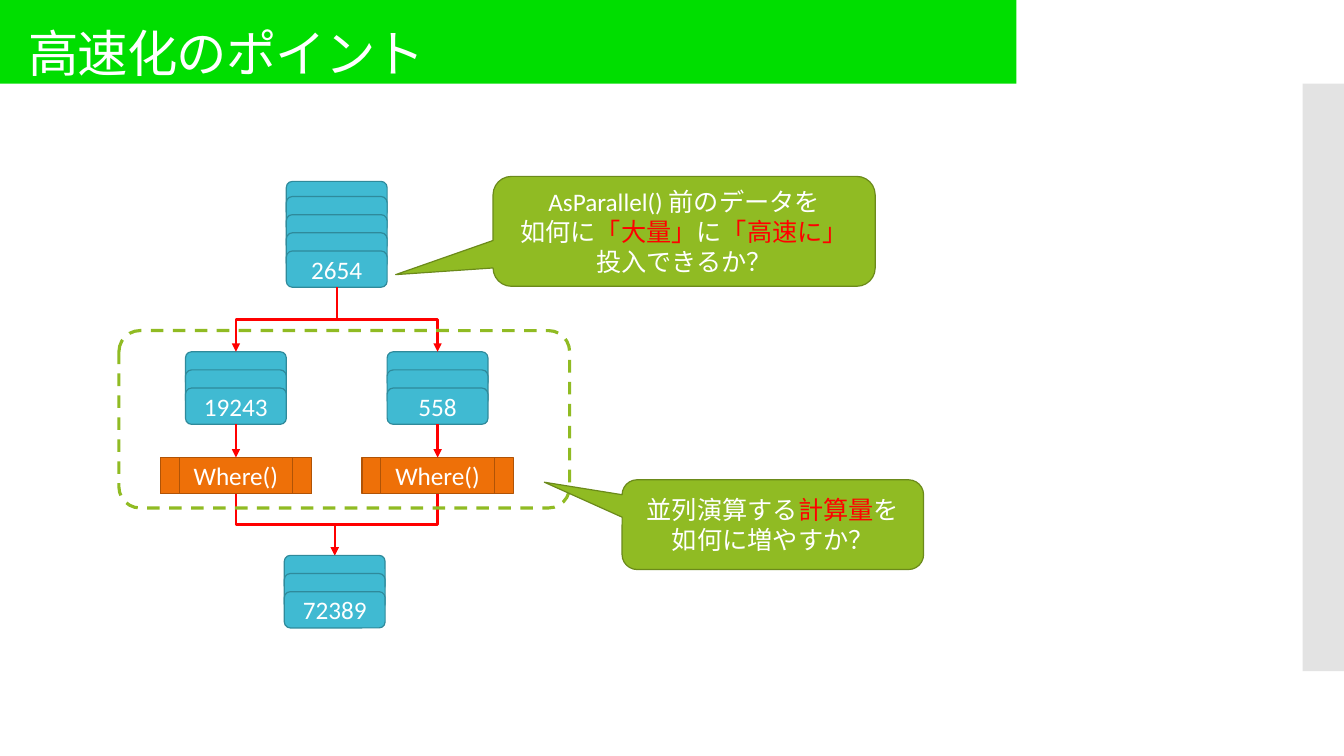
from pptx import Presentation
from pptx.dml.color import RGBColor
from pptx.enum.dml import MSO_LINE
from pptx.enum.shapes import MSO_CONNECTOR, MSO_SHAPE as SHAPE
from pptx.enum.text import MSO_ANCHOR, PP_ALIGN
from pptx.oxml.ns import qn
from pptx.util import Inches, Pt
from lxml.etree import SubElement

WHITE, RED, LIME = "FFFFFF", "FF0000", "90BB23"
CARD_HEIGHT, CARD_STEP = 0.36, 0.18


def rgb(hex_color):
    return RGBColor.from_string(hex_color)


def write(shape, paragraphs, size=18, align=PP_ALIGN.CENTER, line_spacing=None, tracking=None):
    """Fill a shape with paragraphs, each a list of (words, colour) runs."""
    frame = shape.text_frame
    frame.word_wrap = True
    frame.vertical_anchor = MSO_ANCHOR.MIDDLE
    for index, runs in enumerate(paragraphs):
        paragraph = frame.add_paragraph() if index else frame.paragraphs[0]
        paragraph.alignment = align
        if line_spacing:
            paragraph.line_spacing = line_spacing
        for words, color in runs:
            run = paragraph.add_run()
            run.text = words
            run.font.name = "Calibri"
            run.font.size = Pt(size)
            run.font.color.rgb = rgb(color)
            if tracking:
                run.font._element.set("spc", str(round(tracking * 100)))


def draw(slide, kind, box, fill=None, line=None, weight=0.85, adjust=()):
    shape = slide.shapes.add_shape(kind, *map(Inches, box))
    shape.shadow.inherit = False
    for index, value in enumerate(adjust):
        shape.adjustments[index] = value
    if fill:
        shape.fill.solid()
        shape.fill.fore_color.rgb = rgb(fill)
    else:
        shape.fill.background()
    if line:
        shape.line.color.rgb = rgb(line)
        shape.line.width = Pt(weight)
    else:
        shape.line.fill.background()
    return shape


def even_tops(first, count):
    return [first + CARD_STEP * i for i in range(count)]


def data_stack(slide, left, tops, value):
    """Overlapping cards, the front one labelled with its value."""
    for top in tops:
        card = draw(slide, SHAPE.ROUNDED_RECTANGLE, (left, top, 1, CARD_HEIGHT), "40BAD2", "2F8A9B")
    write(card, [[(value, WHITE)]])


def process(slide, left, label):
    box = draw(slide, SHAPE.FLOWCHART_PREDEFINED_PROCESS, (left, 4.54, 1.5, 0.36), "EE7008", "B05306")
    write(box, [[(label, WHITE)]])


def callout(slide, box, pointer, paragraphs):
    bubble = draw(slide, SHAPE.ROUNDED_RECTANGULAR_CALLOUT, box, LIME, "6B8A1A", adjust=(*pointer, 0.167))
    write(bubble, paragraphs)


def down_arrow(slide, x1, y1, x2, y2):
    """Elbow arrow that leaves and arrives vertically: a turned horizontal elbow."""
    run, drop = abs(x2 - x1), y2 - y1
    left = (x1 + x2 - drop) / 2
    top = (y1 + y2 - run) / 2
    start, end = left, left + drop
    angle = 90
    if x2 > x1:
        start, end, angle = end, start, 270
    arrow = slide.shapes.add_connector(
        MSO_CONNECTOR.ELBOW, *map(Inches, (start, top, end, top + run)))
    arrow.line.color.rgb = rgb(RED)
    arrow.line.width = Pt(1.75)
    properties = arrow._element.spPr
    properties.find(qn("a:xfrm")).set("rot", str(angle * 60000))
    SubElement(properties.find(qn("a:ln")), qn("a:tailEnd"), type="triangle")
    SubElement(properties, qn("a:effectLst"))


def background(slide):
    draw(slide, SHAPE.RECTANGLE, (0, 0, 10.08, 0.83), "00DE00")
    side_bar = draw(slide, SHAPE.RECTANGLE, (12.92, 0.83, 0.42, 5.83), "C8C8C8")
    bar_color = next(side_bar._element.spPr.iter(qn("a:srgbClr")))
    SubElement(bar_color, qn("a:alpha"), val="50000")


def main():
    deck = Presentation()
    deck.slide_width, deck.slide_height = Inches(13.33), Inches(7.5)
    slide = deck.slides.add_slide(deck.slide_layouts[6])

    background(slide)
    title = slide.shapes.add_textbox(*map(Inches, (0.18, 0.14, 12.48, 0.83)))
    write(title, [[("高速化のポイント", WHITE)]], size=36, align=PP_ALIGN.LEFT,
          line_spacing=0.9, tracking=-0.6)

    data_stack(slide, 2.84, [1.8, *even_tops(1.95, 4)], "2654")
    for center, value in ((2.34, "19243"), (4.34, "558")):
        data_stack(slide, center - 0.5, even_tops(3.49, 3), value)
        process(slide, center - 0.75, "Where()")
        down_arrow(slide, 3.34, 2.85, center, 3.49)
        down_arrow(slide, center, 4.21, center, 4.54)
        down_arrow(slide, center, 4.9, 3.32, 5.51)
    data_stack(slide, 2.82, even_tops(5.51, 3), "72389")

    parallel_area = draw(slide, SHAPE.ROUNDED_RECTANGLE, (1.18, 3.28, 4.47, 1.76),
                         line=LIME, weight=2.25, adjust=[0.119])
    parallel_area.line.dash_style = MSO_LINE.DASH

    callout(slide, (4.89, 1.75, 3.79, 1.09), (-0.755, 0.394), [
        [("AsParallel() 前のデータを", WHITE)],
        [("如何に", WHITE), ("「大量」", RED), ("に", WHITE), ("「高速に」", RED)],
        [("投入できるか？", WHITE)],
    ])
    callout(slide, (6.17, 4.76, 2.99, 0.89), (-0.758, -0.473), [
        [("並列演算する", WHITE), ("計算量", RED), ("を如何に増やすか？", WHITE)],
    ])
    deck.save("out.pptx")


if __name__ == "__main__":
    main()
